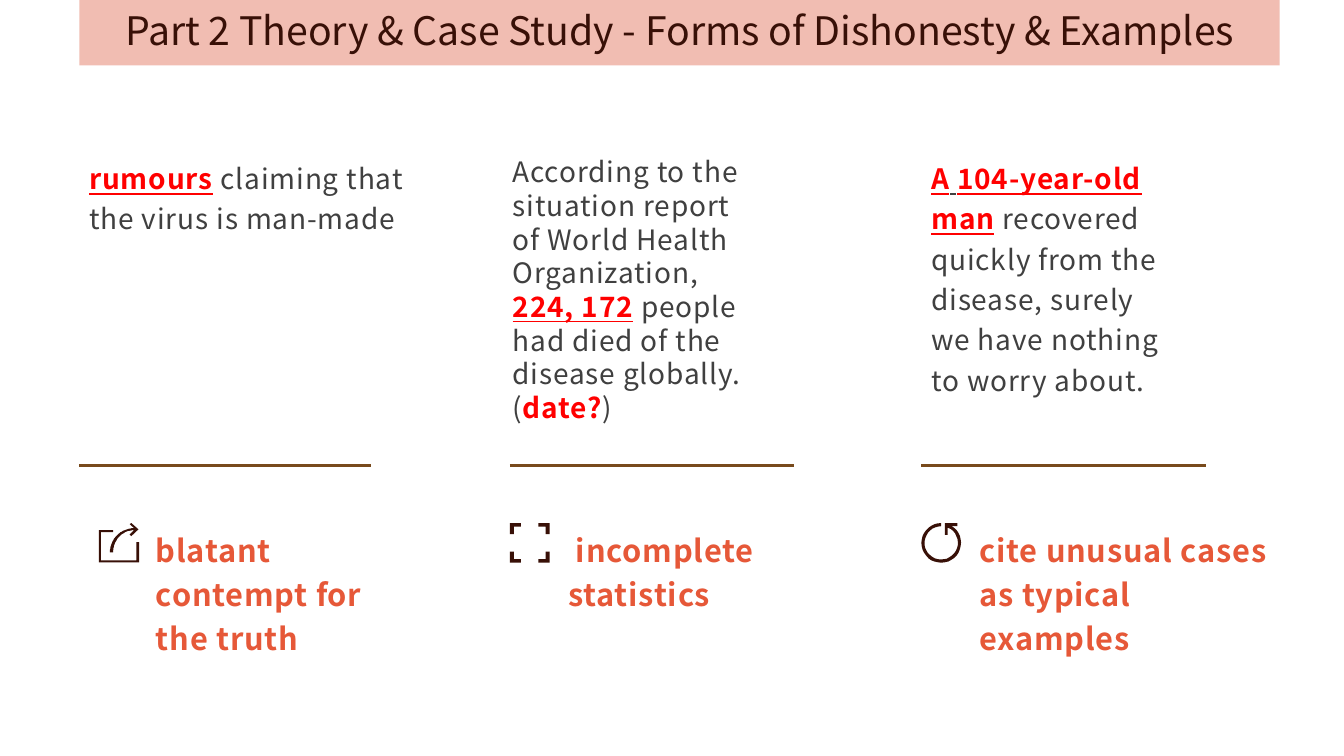
import math
from lxml import etree
from pptx import Presentation
from pptx import util as u
from pptx.dml import color as dml
from pptx.enum import shapes, text
from pptx.oxml import ns


def paint(target, hex_value):
    target.rgb = dml.RGBColor.from_string(hex_value)


def arc(cx, cy, rx, ry, start, end, steps=32):
    angles = [math.radians(start + (end - start) * i / steps) for i in range(steps + 1)]
    return [(cx + rx * math.cos(a), cy + ry * math.sin(a)) for a in angles]


FONT = "Noto Sans CJK SC"
DARK, GREY, RED, ORANGE, BROWN = "381007", "404040", "FF0000", "E65838", "784A1C"

plain = {"size": u.Pt(20), "bold": False, "underline": False}
strong = {"size": u.Pt(20), "bold": True, "underline": False}
marked = {"size": u.Pt(20), "bold": True, "underline": True}
underlined = {"size": u.Pt(20), "bold": False, "underline": True}
verdict = {"size": u.Pt(22), "bold": True, "underline": False}

deck = Presentation()
deck.slide_width, deck.slide_height = u.Cm(33.87), u.Cm(19.05)
slide = deck.slides.add_slide(deck.slide_layouts[5])

heading = slide.shapes.title
for name, value in {"left": 2, "top": 0, "width": 30.25, "height": 1.65}.items():
    setattr(heading, name, u.Cm(value))
heading.fill.solid()
paint(heading.fill.fore_color, "E99280")
tint = heading.fill._xPr.find(".//" + ns.qn("a:srgbClr"))
etree.SubElement(tint, ns.qn("a:alpha")).set("val", "60000")
heading_format = {
    "text": "Part 2 Theory & Case Study - Forms of Dishonesty & Examples",
    "word_wrap": False,
    "auto_size": text.MSO_AUTO_SIZE.NONE,
    "vertical_anchor": text.MSO_ANCHOR.MIDDLE,
}
for name, value in heading_format.items():
    setattr(heading.text_frame, name, value)
heading_line = heading.text_frame.paragraphs[0]
heading_line.alignment = text.PP_ALIGN.CENTER
heading_line.line_spacing = 0.9
for name, value in {"name": FONT, "size": u.Pt(28)}.items():
    setattr(heading_line.runs[0].font, name, value)
paint(heading_line.runs[0].font.color, DARK)

passages = [
    (2, 3.78, 8.46, 3.33, 1.2, [
        ("rumours", RED, marked),
        (" claiming that the virus is man-made", GREY, plain)]),
    (12.67, 3.78, 6.81, 7.95, 1.0, [
        ("According to the situation report of World Health Organization, ", GREY, plain),
        ("224, 172", RED, marked),
        (" people had died of the disease globally. (", GREY, plain),
        ("date?", RED, strong),
        (")", GREY, plain)]),
    (23.22, 3.78, 6.63, 7.44, 1.2, [
        ("A", RED, marked),
        (" ", GREY, underlined),
        ("104-year-old man", RED, marked),
        (" recovered quickly from the disease, surely we have nothing to worry about.",
         GREY, plain)]),
    (3.68, 13.08, 6.32, 3.63, 1.2, [("blatant contempt for the truth", ORANGE, verdict)]),
    (14.07, 13.08, 6.76, 2.51, 1.2, [(" incomplete statistics", ORANGE, verdict)]),
    (24.43, 13.08, 7.85, 3.63, 1.2, [
        ("cite unusual cases as typical examples", ORANGE, verdict)]),
]
for left, top, width, height, spacing, pieces in passages:
    frame = slide.shapes.add_textbox(*map(u.Cm, (left, top, width, height))).text_frame
    frame.word_wrap = True
    frame.auto_size = text.MSO_AUTO_SIZE.SHAPE_TO_FIT_TEXT
    passage = frame.paragraphs[0]
    passage.line_spacing = spacing
    for words, colour, style in pieces:
        run = passage.add_run()
        run.text = words
        for name, value in {"name": FONT, **style}.items():
            setattr(run.font, name, value)
        paint(run.font.color, colour)
        run._r.get_or_add_rPr().set("spc", "60")

for start, end in [(2, 9.35), (12.85, 20.02), (23.22, 30.38)]:
    rule = slide.shapes.add_connector(
        shapes.MSO_CONNECTOR.STRAIGHT, u.Cm(start), u.Cm(11.73), u.Cm(end), u.Cm(11.73))
    rule.line.width = u.Pt(2.25)
    paint(rule.line.color, BROWN)
    etree.SubElement(rule._element.spPr, ns.qn("a:effectLst"))

tray = [(0, 18), (36, 18), (36, 23), (5, 23), (5, 94), (95, 94), (95, 48),
        (102, 48), (102, 99), (0, 99)]
share_arrow = ([(82, 0), (100, 16), (82, 33), (78, 29)]
               + arc(89, 74, 53, 56, 270, 180) + arc(89, 74, 61, 61, 180, 270)
               + [(78, 3)])
bracket = [(0, 0), (28, 0), (28, 9), (10, 9), (10, 28), (0, 28)]
corners = [[(abs(x - flip_x), abs(y - flip_y)) for x, y in bracket]
           for flip_x in (0, 100) for flip_y in (0, 100)]
reload_ring = ([(59, 0), (91, 0), (91, 8), (76, 8)]
               + arc(50, 50, 50, 50, -51, 270) + arc(50, 50, 42, 42, 270, -66)
               + [(66, 11), (66, 30), (59, 30)])

for left, outlines in [(2.49, [tray, share_arrow]), (12.85, corners), (23.22, [reload_ring])]:
    pen = slide.shapes.build_freeform(*outlines[0][0], scale=u.Cm(0.01))
    pen.add_line_segments(outlines[0][1:])
    for outline in outlines[1:]:
        pen.move_to(*outline[0])
        pen.add_line_segments(outline[1:])
    icon = pen.convert_to_shape(u.Cm(left), u.Cm(13.18))
    icon.shadow.inherit = False
    icon.fill.solid()
    paint(icon.fill.fore_color, DARK)
    icon.line.fill.background()

deck.save("out.pptx")
